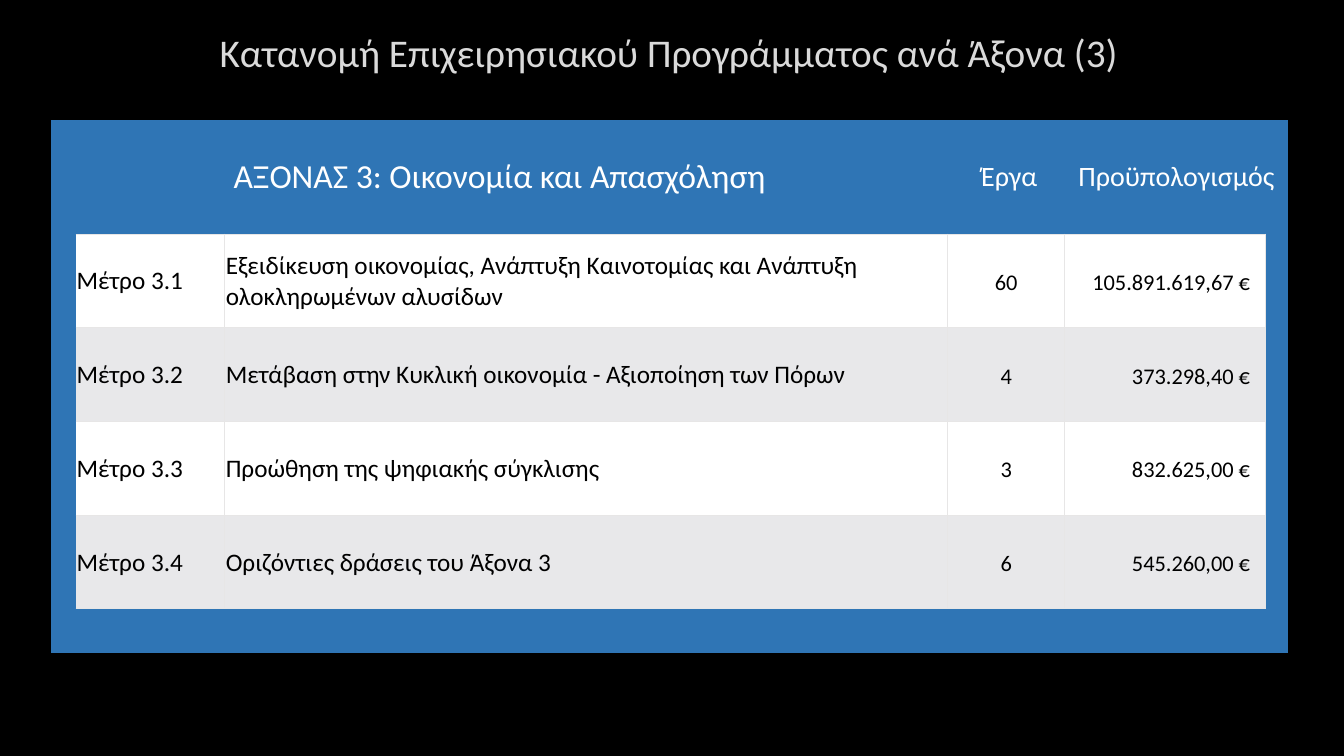
from typing import NamedTuple

from lxml.etree import SubElement
from pptx import Presentation
from pptx.dml.color import RGBColor
from pptx.enum.text import MSO_ANCHOR, PP_ALIGN
from pptx.oxml.ns import qn
from pptx.util import Emu, Pt

PX = 9144  # EMU per px, 100 px to the inch
BLACK = RGBColor(0x00, 0x00, 0x00)
WHITE = RGBColor(0xFF, 0xFF, 0xFF)
BLUE = RGBColor(0x2F, 0x75, 0xB5)
BAND = RGBColor(0xE8, 0xE8, 0xEA)
RULE = RGBColor(0xE7, 0xE6, 0xE6)
SILVER = RGBColor(0xDA, 0xDA, 0xDA)

COLS = (24, 148, 717, 116, 199, 23)
ROWS = (113, 93, 93, 93, 93, 44)
LAST = len(ROWS) - 1


class Style(NamedTuple):
    size: int
    color: RGBColor
    align: PP_ALIGN = PP_ALIGN.LEFT
    side: int = 1
    top: int = 1
    line: float = 1.0
    after: int = 0


class Head(NamedTuple):
    text: str
    first: int
    last: int
    size: int


class Measure(NamedTuple):
    code: str
    name: str
    count: str
    budget: str


HEADS = (
    Head("ΑΞΟΝΑΣ 3: Οικονομία και Απασχόληση", 0, 2, 24),
    Head(" Έργα", 3, 3, 20),
    Head(" Προϋπολογισμός ", 4, 5, 20),
)
MEASURES = (
    Measure("Μέτρο 3.1", "Εξειδίκευση οικονομίας, Ανάπτυξη Καινοτομίας και "
            "Ανάπτυξη ολοκληρωμένων αλυσίδων", "60", "105.891.619,67 €"),
    Measure("Μέτρο 3.2", "Μετάβαση στην Κυκλική οικονομία - Αξιοποίηση των Πόρων",
            "4", "373.298,40 €"),
    Measure("Μέτρο 3.3", "Προώθηση της ψηφιακής σύγκλισης", "3", "832.625,00 €"),
    Measure("Μέτρο 3.4", "Οριζόντιες δράσεις του Άξονα 3", "6", "545.260,00 €"),
)
LABEL = Style(18, BLACK)
COUNT = Style(16, BLACK, PP_ALIGN.CENTER, 15, 2, 1.07, 8)
BUDGET = COUNT._replace(align=PP_ALIGN.RIGHT)
STYLES = (LABEL, LABEL, COUNT, BUDGET)


def px(value: int) -> Emu:
    return Emu(value * PX)


def write(frame, text: str, style: Style) -> None:
    """Put one styled paragraph in a text frame."""
    para = frame.paragraphs[0]
    form = {"alignment": style.align, "line_spacing": style.line,
            "space_after": Pt(style.after)}
    for key, value in form.items():
        setattr(para, key, value)
    run = para.add_run()
    run.text = text
    run.font.name = "Calibri"
    run.font.size = Pt(style.size)
    run.font.color.rgb = style.color


def edges(row: int, col: int) -> str:
    """Return the sides of a cell that carry a thin rule."""
    inner = 1 <= col <= 4
    if row == 0:
        return "B" if col in (3, 4) else ""
    if row == LAST:
        return "T" if inner else ""
    if inner:
        return "RTB" if col == 1 else "LRTB"
    return "L" if col == 5 else ""


def border(cell, sides: str) -> None:
    props = cell._tc.get_or_add_tcPr()
    for side in "LRTB":
        line = SubElement(props, qn(f"a:ln{side}"), w=str(Pt(0.5)))
        if side in sides:
            fill = SubElement(line, qn("a:solidFill"))
            SubElement(fill, qn("a:srgbClr"), val=str(RULE))
        else:
            SubElement(line, qn("a:noFill"))


def dress(cell, row: int, col: int) -> None:
    """Set the borders, fill and margins of a cell."""
    border(cell, edges(row, col))
    body = 0 < row < LAST and 1 <= col <= 4
    cell.fill.solid()
    cell.fill.fore_color.rgb = (WHITE if row % 2 else BAND) if body else BLUE
    style = STYLES[col - 1] if body else LABEL
    form = {"margin_left": px(style.side), "margin_right": px(style.side),
            "margin_top": px(style.top), "margin_bottom": 0,
            "vertical_anchor": MSO_ANCHOR.MIDDLE}
    for key, value in form.items():
        setattr(cell, key, value)


def add_grid(slide) -> None:
    shape = slide.shapes.add_table(len(ROWS), len(COLS), px(51), px(119),
                                   px(sum(COLS)), px(sum(ROWS)))
    table = shape.table
    table.first_row = table.horz_banding = False
    for col, width in zip(table.columns, COLS):
        col.width = px(width)
    for row, height in zip(table.rows, ROWS):
        row.height = px(height)
    for row in range(len(ROWS)):
        for col in range(len(COLS)):
            dress(table.cell(row, col), row, col)

    # Header row
    for head in HEADS:
        cell = table.cell(0, head.first)
        if head.last > head.first:
            cell.merge(table.cell(0, head.last))
        write(cell.text_frame, head.text, Style(head.size, WHITE, PP_ALIGN.CENTER))

    # Measures
    for row, item in enumerate(MEASURES, 1):
        for col, (text, style) in enumerate(zip(item, STYLES), 1):
            write(table.cell(row, col).text_frame, text, style)


def add_title(slide) -> None:
    box = slide.shapes.add_textbox(px(97), px(16), px(1132), px(71))
    frame = box.text_frame
    frame.word_wrap = True
    frame.vertical_anchor = MSO_ANCHOR.MIDDLE
    write(frame, "Κατανομή Επιχειρησιακού Προγράμματος ανά Άξονα (3)",
          Style(28, SILVER, PP_ALIGN.CENTER))


def main() -> None:
    deck = Presentation()
    deck.slide_width, deck.slide_height = px(1333), px(750)
    slide = deck.slides.add_slide(deck.slide_layouts[6])
    slide.background.fill.solid()
    slide.background.fill.fore_color.rgb = BLACK
    add_grid(slide)
    add_title(slide)
    deck.save("out.pptx")


if __name__ == "__main__":
    main()
